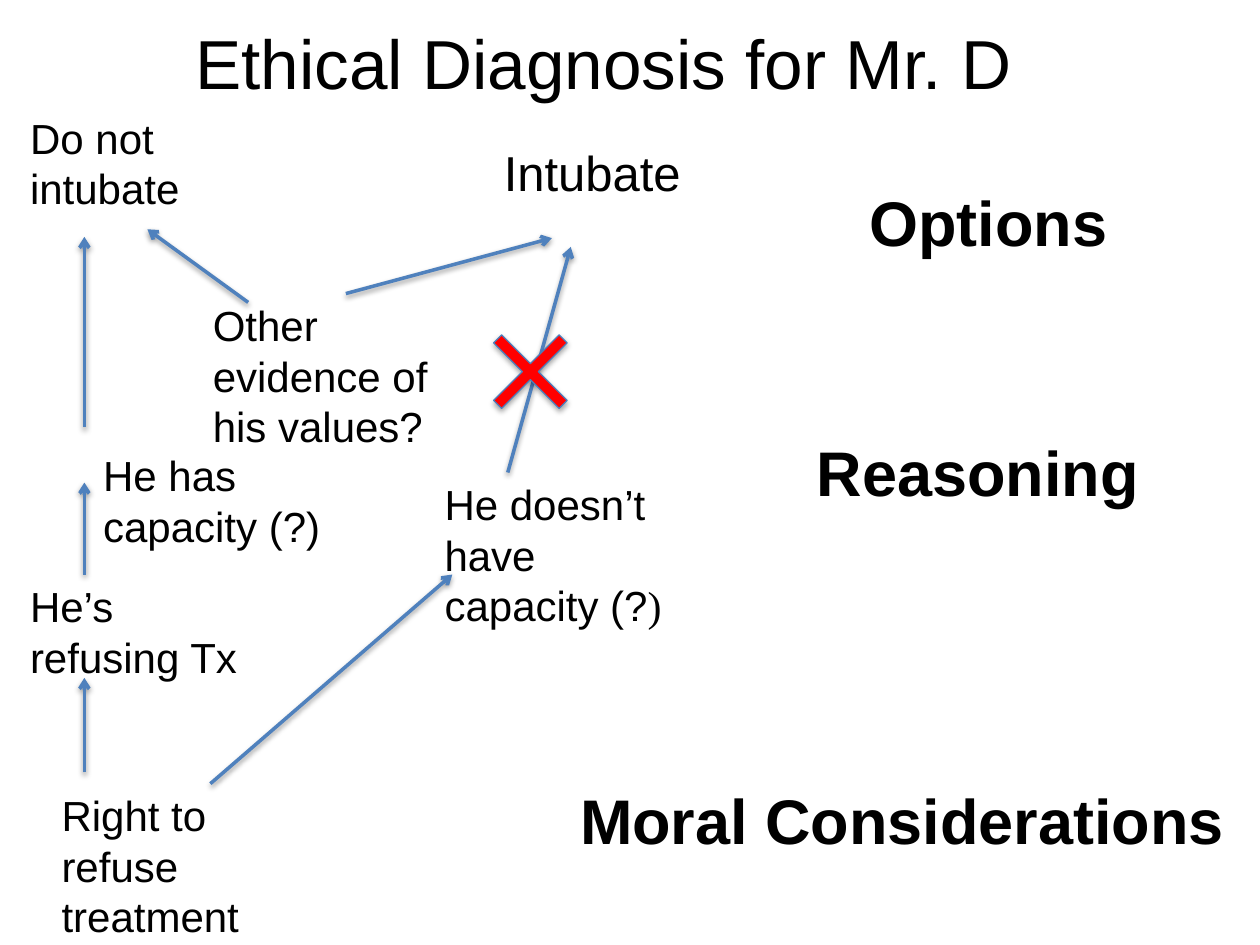
"""Build the ethical diagnosis slide: options, reasoning and moral considerations."""
from dataclasses import dataclass

from lxml import etree
from pptx import Presentation
from pptx.dml.color import RGBColor
from pptx.enum.shapes import MSO_CONNECTOR, MSO_SHAPE
from pptx.enum.text import MSO_ANCHOR, MSO_AUTO_SIZE, PP_ALIGN
from pptx.oxml.ns import qn
from pptx.shapes.autoshape import Shape
from pptx.shapes.connector import Connector
from pptx.slide import Slide
from pptx.util import Emu, Pt

STRAIGHT = MSO_CONNECTOR.STRAIGHT
CROSS = MSO_SHAPE.MATH_MULTIPLY
LEFT, CENTER = PP_ALIGN.LEFT, PP_ALIGN.CENTER
TOP, MIDDLE = MSO_ANCHOR.TOP, MSO_ANCHOR.MIDDLE
GROW, FIXED = MSO_AUTO_SIZE.SHAPE_TO_FIT_TEXT, MSO_AUTO_SIZE.NONE

BLACK = RGBColor(0x00, 0x00, 0x00)
RED = RGBColor(0xFF, 0x00, 0x00)
ARROW_BLUE = RGBColor(0x4F, 0x81, 0xBD)
EDGE_BLUE = RGBColor(0x4B, 0x7E, 0xBC)

EMU_PER_PX = 9144
SANS, SERIF = "Arial", "Times New Roman"
TOP_SIDE = 0
AXIS = 67


@dataclass(frozen=True)
class Label:
    text: str
    left: int
    top: int
    width: int
    height: int
    size: float = 24
    bold: bool = False
    align: PP_ALIGN = LEFT
    anchor: MSO_ANCHOR = TOP
    fit: MSO_AUTO_SIZE = GROW
    wrap: bool = True
    serif_ending: str = ""


@dataclass(frozen=True)
class Arrow:
    x1: int
    y1: int
    x2: int
    y2: int


@dataclass(frozen=True)
class Shadow:
    opacity: int
    distance: int
    blur: int = 40000


TITLE = Label("Ethical Diagnosis for Mr. D", 29, 13, 900, 72, 39.6,
              align=CENTER, anchor=MIDDLE, fit=FIXED)
OTHER_EVIDENCE = Label("Other evidence of his values?", 159, 233, 231, 131)
STATEMENTS = [
    Label("Right to refuse treatment", 39, 622, 180, 131),
    Label("Do not intubate", 14, 84, 218, 91),
    Label("Intubate", 390, 108, 185, 57, 28),
    Label("He’s refusing Tx", 14, 456, 186, 91),
    Label("He doesn’t have capacity (?", 343, 375, 194, 131, serif_ending=")"),
    Label("He has capacity (?)", 72, 352, 196, 91),
]
LEVELS = [
    Label("Options", 679, 141, 211, 71, 36, True, CENTER, wrap=False),
    Label("Reasoning", 635, 339, 282, 71, 36, True, CENTER),
    Label("Moral Considerations", 448, 615, 536, 71, 36, True, CENTER, wrap=False),
]
ARROWS = [
    Arrow(AXIS, 613, AXIS, 538),
    Arrow(AXIS, 456, AXIS, 383),
    Arrow(AXIS, 339, AXIS, 188),
    Arrow(167, 622, 359, 456),
    Arrow(403, 375, 453, 196),
    Arrow(197, 240, 117, 182),
]
EVIDENCE_TO_INTUBATE = Arrow(275, 233, 438, 189)
ARROW_SHADOW = Shadow(38000, 20000)
CROSS_SHADOW = Shadow(35000, 23000)


def px(length: int) -> Emu:
    return Emu(length * EMU_PER_PX)


def add_label(page: Slide, label: Label) -> Shape:
    box = page.shapes.add_textbox(
        px(label.left), px(label.top), px(label.width), px(label.height))
    frame = box.text_frame
    frame.text = label.text
    frame.word_wrap = label.wrap
    frame.auto_size = label.fit
    frame.vertical_anchor = label.anchor
    para = frame.paragraphs[0]
    para.alignment = label.align
    if label.serif_ending:
        para.add_run().text = label.serif_ending
    for span, font_name in zip(para.runs, (SANS, SERIF)):
        span.font.name = font_name
        span.font.size = Pt(label.size)
        span.font.bold = label.bold
        span.font.color.rgb = BLACK
    return box


def add_shadow(properties: etree.ElementBase, shadow: Shadow) -> None:
    effects = etree.SubElement(properties, qn("a:effectLst"))
    outer = etree.SubElement(
        effects, qn("a:outerShdw"), blurRad=str(shadow.blur),
        dist=str(shadow.distance), dir="5400000", rotWithShape="0")
    color = etree.SubElement(outer, qn("a:srgbClr"), val=str(BLACK))
    etree.SubElement(color, qn("a:alpha"), val=str(shadow.opacity))


def add_arrow(page: Slide, arrow: Arrow) -> Connector:
    connector = page.shapes.add_connector(
        STRAIGHT, px(arrow.x1), px(arrow.y1), px(arrow.x2), px(arrow.y2))
    connector.line.color.rgb = ARROW_BLUE
    connector.line.width = Pt(2)
    properties = connector.element.spPr
    etree.SubElement(properties.find(qn("a:ln")), qn("a:tailEnd"), type="arrow")
    add_shadow(properties, ARROW_SHADOW)
    return connector


def add_cross(page: Slide) -> None:
    cross = page.shapes.add_shape(CROSS, px(371), px(245), px(100), px(100))
    cross.adjustments[0] = 0.09
    cross.fill.solid()
    cross.fill.fore_color.rgb = RED
    cross.line.color.rgb = EDGE_BLUE
    cross.line.width = Pt(0.75)
    add_shadow(cross.element.spPr, CROSS_SHADOW)


def main() -> None:
    deck = Presentation()
    deck.slide_width, deck.slide_height = px(1000), px(750)
    page = deck.slides.add_slide(deck.slide_layouts[6])
    for label in [TITLE, *STATEMENTS, *LEVELS]:
        add_label(page, label)
    evidence_box = add_label(page, OTHER_EVIDENCE)
    for arrow in ARROWS:
        add_arrow(page, arrow)
    add_cross(page)
    add_arrow(page, EVIDENCE_TO_INTUBATE).begin_connect(evidence_box, TOP_SIDE)
    deck.save("out.pptx")


if __name__ == "__main__":
    main()
